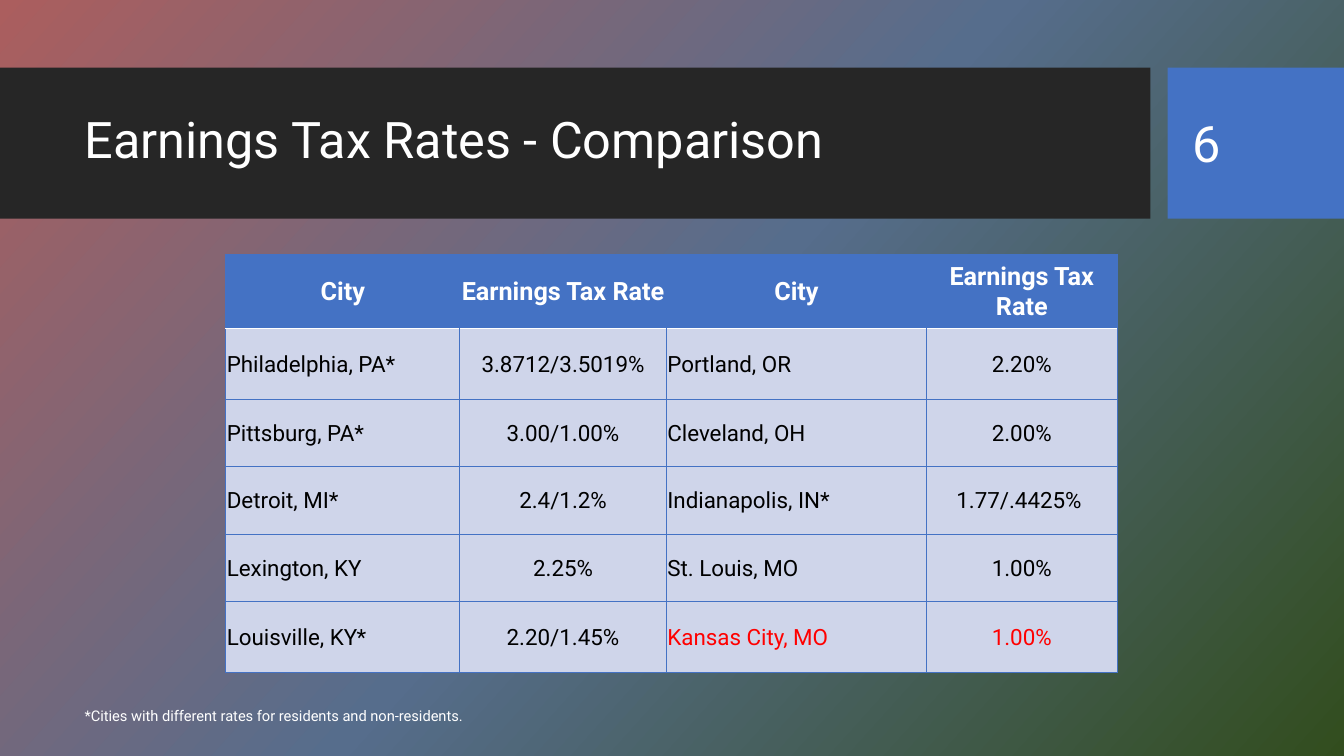
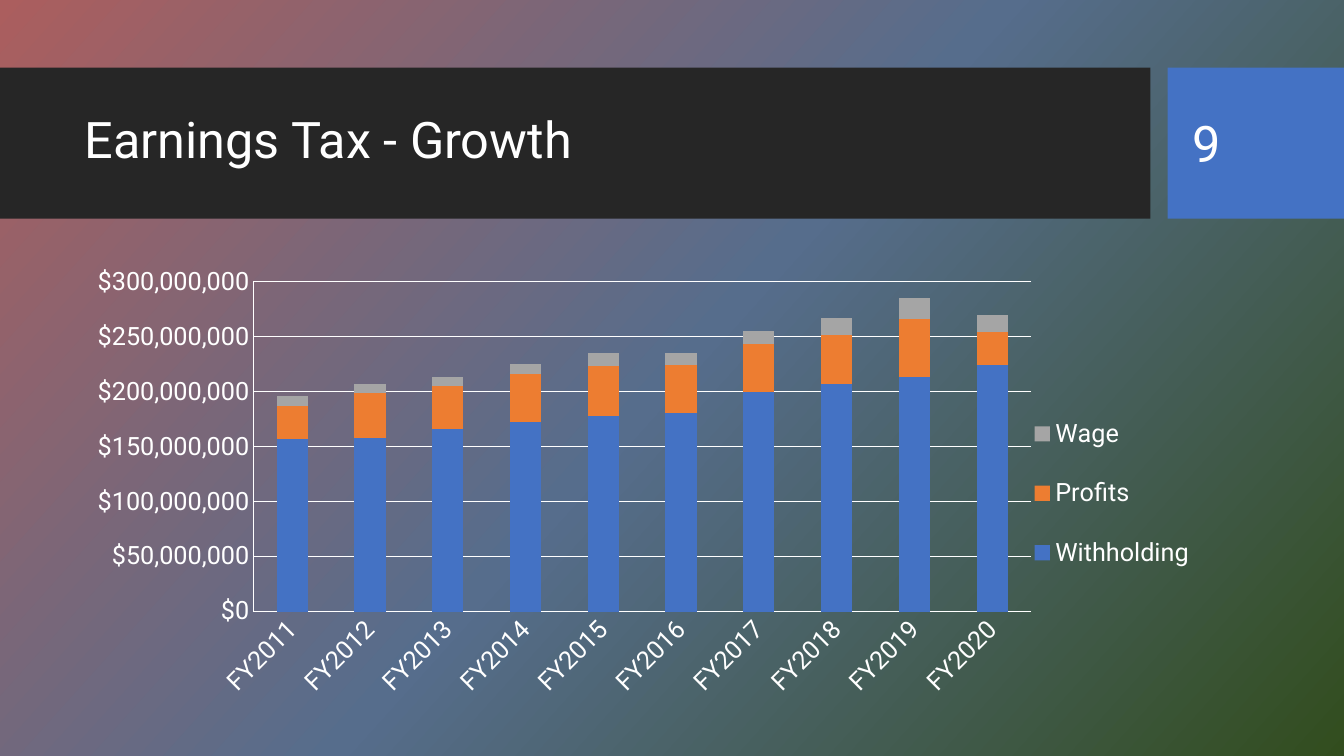
"""Builds two slides on earnings tax: a rate table and a growth chart."""
from lxml.etree import SubElement
from pptx import Presentation
from pptx.chart.data import CategoryChartData
from pptx.dml.color import RGBColor
from pptx.enum.chart import XL_CHART_TYPE, XL_LEGEND_POSITION, XL_TICK_MARK
from pptx.enum.shapes import MSO_SHAPE
from pptx.enum.text import MSO_ANCHOR, MSO_AUTO_SIZE, PP_ALIGN
from pptx.oxml import parse_xml
from pptx.oxml.ns import nsdecls, qn
from pptx.util import Inches, Pt

FONT = "Roboto"
HUES = {
    "white": "FFFFFF", "black": "000000", "dark": "262626", "blue": "4472C4",
    "pale": "CFD5EA", "red": "FF0000", "orange": "ED7D31", "gray": "A5A5A5",
}
STOPS = [(0, "AB5E5E"), (50, "566D8C"), (100, "324D1E")]
ANGLE = 42

BANDS = [((0, 0.67, 11.41, 1.5), "dark"), ((11.58, 0.67, 1.75, 1.5), "blue")]
TITLE = (0.74, 0.82, 10.51, 1.18)
NUMBER = (11.73, 0.82, 1.26, 1.19)

RATES = [
    ("City", "Earnings Tax Rate", "City", "Earnings Tax Rate"),
    ("Philadelphia, PA*", "3.8712/3.5019%", "Portland, OR", "2.20%"),
    ("Pittsburg, PA*", "3.00/1.00%", "Cleveland, OH", "2.00%"),
    ("Detroit, MI*", "2.4/1.2%", "Indianapolis, IN*", "1.77/.4425% "),
    ("Lexington, KY", "2.25%", "St. Louis, MO", "1.00%"),
    ("Louisville, KY*", "2.20/1.45%", "Kansas City, MO", "1.00%"),
]
WIDTHS = [2.32, 2.05, 2.58, 1.89]
HEIGHTS = [0.74, 0.7, 0.67, 0.67, 0.67, 0.7]
MARKED = {(5, 2), (5, 3)}
NOTE = "*Cities with different rates for residents and non-residents."

YEARS = [f"FY{year}" for year in range(2011, 2021)]
MILLIONS = [
    ("Withholding", "blue", (157, 158, 166, 172, 178, 181, 200, 207, 213, 224)),
    ("Profits", "orange", (30, 41, 39, 44, 45, 43, 43, 45, 53, 30)),
    ("Wage", "gray", (9, 8, 8, 9, 12, 11, 12, 15, 19, 16)),
]


def rgb(hue):
    return RGBColor.from_string(HUES[hue])


def inch(box):
    return [Inches(n) for n in box]


def style(font, size, hue="white", bold=False):
    font.name, font.size, font.bold = FONT, Pt(size), bold
    font.color.rgb = rgb(hue)


def write(shape, text, size):
    frame = shape.text_frame
    frame.word_wrap = True
    frame.auto_size = MSO_AUTO_SIZE.NONE
    frame.vertical_anchor = MSO_ANCHOR.MIDDLE
    para = frame.paragraphs[0]
    para.text = text
    para.alignment = PP_ALIGN.LEFT
    style(para.font, size)
    return para


def paint(master):
    stops = "".join(
        f'<a:gs pos="{pos * 1000}"><a:srgbClr val="{hue}"/></a:gs>'
        for pos, hue in STOPS)
    fill = parse_xml(
        f'<a:gradFill {nsdecls("a")} rotWithShape="1"><a:gsLst>{stops}</a:gsLst>'
        f'<a:lin ang="{ANGLE * 60000}" scaled="0"/></a:gradFill>')
    master.background.fill.solid()
    old = master.element.xpath("p:cSld/p:bg/p:bgPr/a:solidFill")[0]
    old.getparent().replace(old, fill)


def add_bands(slide, master):
    for spot, (box, hue) in enumerate(BANDS, 2):
        band = slide.shapes.add_shape(MSO_SHAPE.RECTANGLE, *inch(box))
        band.shadow.inherit = False
        band.fill.solid()
        band.fill.fore_color.rgb = rgb(hue)
        band.line.fill.background()
        master.shapes.element.insert(spot, band.element)


def add_page(deck, layout, title, number):
    slide = deck.slides.add_slide(layout)
    write(slide.shapes.title, title, 36).line_spacing = 0.9
    write(slide.shapes.add_textbox(*inch(NUMBER)), number, 36)
    return slide


def edge(props, spot, side, hue, width):
    ink = (f'<a:solidFill><a:srgbClr val="{HUES[hue]}"/></a:solidFill>'
           if hue else "<a:noFill/>")
    props.insert(spot, parse_xml(
        f'<a:ln{side} {nsdecls("a")} w="{Pt(width)}">{ink}</a:ln{side}>'))


def add_rates(slide):
    rows, cols = len(RATES), len(WIDTHS)
    frame = slide.shapes.add_table(
        rows, cols, *inch((2.24, 2.52, sum(WIDTHS), sum(HEIGHTS))))
    table = frame.table
    table.horz_banding = False
    for col, width in zip(table.columns, WIDTHS):
        col.width = Inches(width)
    for row, height in zip(table.rows, HEIGHTS):
        row.height = Inches(height)
    for r, texts in enumerate(RATES):
        for c, text in enumerate(texts):
            cell, head = table.cell(r, c), r == 0
            cell.fill.solid()
            cell.fill.fore_color.rgb = rgb("blue" if head else "pale")
            cell.vertical_anchor = MSO_ANCHOR.MIDDLE
            cell.margin_left = cell.margin_right = cell.margin_top = Inches(0.01)
            cell.margin_bottom = 0
            para = cell.text_frame.paragraphs[0]
            para.text = text
            para.alignment = PP_ALIGN.CENTER if head or c % 2 else PP_ALIGN.LEFT
            hue = "white" if head else "red" if (r, c) in MARKED else "black"
            style(para.font, 18 if head else 16, hue, head)
    for n, props in enumerate(frame.element.xpath(".//a:tcPr")):
        r, c = divmod(n, cols)
        left = "blue" if r or c == 0 else None
        right = "blue" if r or c == cols - 1 else None
        edge(props, 0, "L", left, 0.75)
        edge(props, 1, "R", right, 0.75)
        edge(props, 2, "T", *(("white", 1) if r == 1 else ("blue", 0.75)))
        edge(props, 3, "B", *(("white", 1) if r == 0 else ("blue", 0.75)))


def place(part, spot, box):
    for old in part.findall(qn("c:layout")):
        part.remove(old)
    layout = parse_xml(f'<c:layout {nsdecls("c")}/>')
    manual = SubElement(layout, qn("c:manualLayout"))
    for tag, val in [("xMode", "edge"), ("yMode", "edge"), *zip("xywh", box)]:
        SubElement(manual, qn(f"c:{tag}")).set("val", str(val))
    part.insert(spot, layout)


def add_growth(slide):
    data = CategoryChartData(number_format='"$"#,##0')
    data.categories = YEARS
    for name, _, vals in MILLIONS:
        data.add_series(name, [val * 1000000 for val in vals])
    chart = slide.shapes.add_chart(
        XL_CHART_TYPE.COLUMN_STACKED, *inch((0.74, 2.56, 11.43, 4.49)), data).chart
    style(chart.font, 18)
    chart.has_title = False
    plot = chart.plots[0]
    plot.gap_width, plot.overlap = 150, 100
    plot.vary_by_categories = False
    for series, (_, hue, _) in zip(plot.series, MILLIONS):
        series.format.fill.solid()
        series.format.fill.fore_color.rgb = rgb(hue)
    value, years = chart.value_axis, chart.category_axis
    value.minimum_scale, value.maximum_scale = 0, 300000000
    value.major_unit = 50000000
    value.has_major_gridlines = True
    value.tick_labels.number_format = '"$"#,##0'
    value.tick_labels.number_format_is_linked = False
    for axis in (value, years):
        axis.major_tick_mark = axis.minor_tick_mark = XL_TICK_MARK.NONE
        style(axis.tick_labels.font, 18)
    for part in (value, years, value.major_gridlines):
        part.format.line.color.rgb = rgb("white")
        part.format.line.width = Pt(0.75)
    body = chart.element.xpath(".//c:catAx/c:txPr/a:bodyPr")[0]
    body.set("rot", "-60000000")
    body.set("vert", "horz")
    chart.has_legend = True
    chart.legend.position = XL_LEGEND_POSITION.RIGHT
    chart.legend.include_in_layout = False
    style(chart.legend.font, 18)
    place(chart.element.xpath(".//c:plotArea")[0], 0, (0.02, 0.02, 0.81, 0.95))
    place(chart.element.xpath(".//c:legend")[0], 1, (0.83, 0.29, 0.14, 0.46))


def main():
    deck = Presentation()
    deck.slide_width, deck.slide_height = Inches(13.33), Inches(7.5)
    master, layout = deck.slide_master, deck.slide_layouts[5]
    paint(master)
    title = layout.placeholders[0]
    title.left, title.top, title.width, title.height = inch(TITLE)

    rates = add_page(deck, layout, "Earnings Tax Rates - Comparison", "6")
    add_bands(rates, master)
    add_rates(rates)
    note = rates.shapes.add_textbox(*inch((0.74, 6.9, 7.51, 0.4)))
    write(note, NOTE, 10.5).space_after = Pt(6)

    growth = add_page(deck, layout, "Earnings Tax - Growth", "9")
    add_growth(growth)
    deck.save("out.pptx")


if __name__ == "__main__":
    main()
